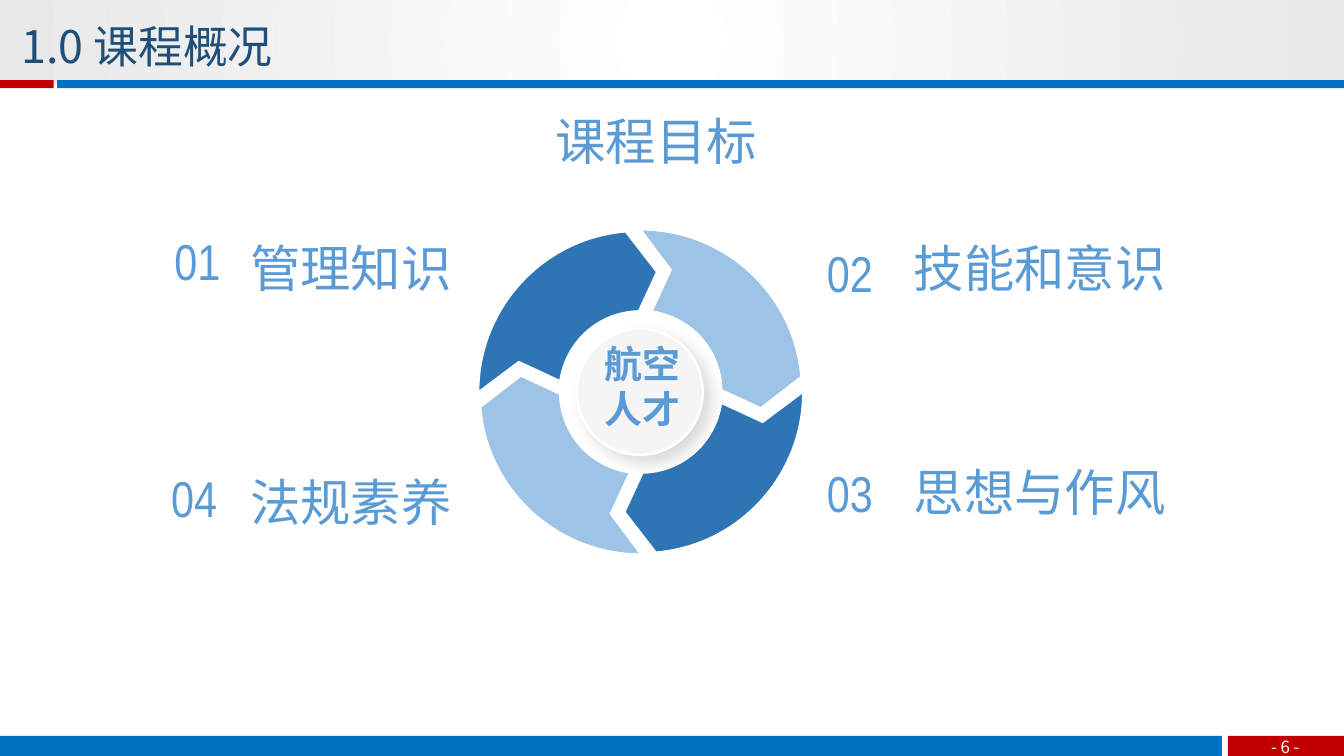
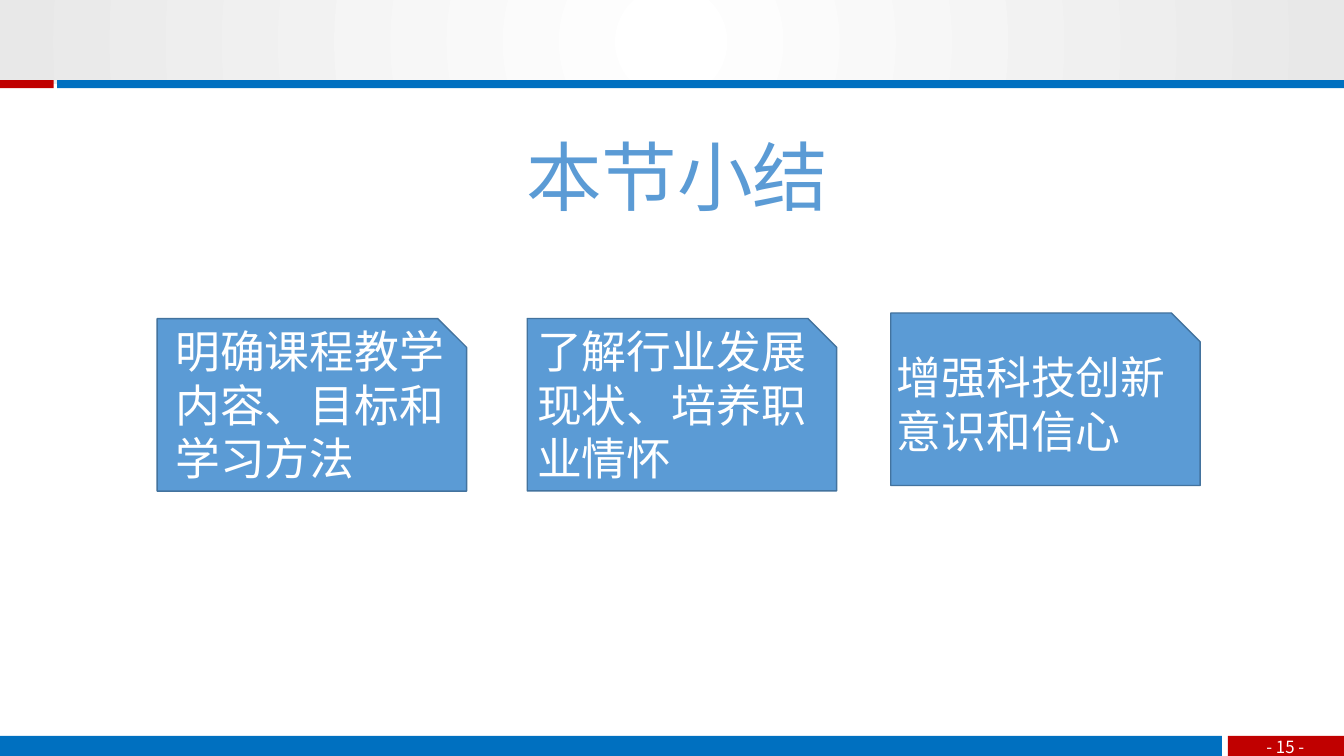
"""Build the course overview and section summary slides."""
from lxml.etree import SubElement
from pptx import Presentation
from pptx.dml.color import RGBColor
from pptx.enum.shapes import MSO_SHAPE
from pptx.enum.text import MSO_ANCHOR, PP_ALIGN
from pptx.oxml.ns import qn
from pptx.util import Pt

CJK, NARROW, LATIN = "Noto Sans CJK SC", "Arial Narrow", "Arial"
WHITE, RED, BLUE, SKY = "FFFFFF", "C00000", "0070C0", "5B9BD5"
DARK, LIGHT, NAVY, EDGE = "2E75B6", "9DC3E6", "1F4E79", "43739E"


def paint(s, fill, line=None, width=1):
    s.shadow.inherit = False
    s.fill.solid()
    s.fill.fore_color.rgb = RGBColor.from_string(fill)
    if line:
        s.line.color.rgb = RGBColor.from_string(line)
        s.line.width = Pt(width)
    else:
        s.line.fill.background()


def add_text(slide, box, text, size, font, color, spacing=None, inset=True):
    tf = slide.shapes.add_textbox(*map(Pt, box)).text_frame
    tf.word_wrap = True
    if not inset:
        tf.margin_left = tf.margin_top = tf.margin_right = tf.margin_bottom = 0
        tf.vertical_anchor = MSO_ANCHOR.MIDDLE
    p = tf.paragraphs[0]
    p.text = text
    p.line_spacing = spacing
    p.font.size = Pt(size)
    p.font.name = font
    p.font.color.rgb = RGBColor.from_string(color)
    return p


prs = Presentation()
prs.slide_width, prs.slide_height = Pt(960), Pt(540)
bands = [
    (40.8, 57.2, 919.2, 5.8, BLUE),
    (0, 57.2, 38.3, 5.8, RED),
    (0, 525.6, 872.8, 14.4, BLUE),
    (877, 525.6, 83, 14.4, RED),
]
slides = []
for number in ("- 6 -", "- 15 -"):
    slide = prs.slides.add_slide(prs.slide_layouts[6])
    slides.append(slide)
    header = slide.shapes.add_shape(MSO_SHAPE.RECTANGLE, Pt(-1.2), 0, Pt(961.2), Pt(59.8))
    header.shadow.inherit = False
    header.line.fill.background()
    header.fill.gradient()
    for stop, color in zip(header.fill.gradient_stops, (WHITE, "E8E8E8")):
        stop.color.rgb = RGBColor.from_string(color)
    grad = header.element.spPr.find(qn("a:gradFill"))
    grad.remove(grad.find(qn("a:lin")))
    circle = SubElement(grad, qn("a:path"), path="circle")
    SubElement(circle, qn("a:fillToRect"), l="50000", t="50000", r="50000", b="50000")
    for x, y, w, h, color in bands:
        s = slide.shapes.add_shape(MSO_SHAPE.RECTANGLE, Pt(x), Pt(y), Pt(w), Pt(h))
        paint(s, color)
    p = add_text(slide, (890, 522.7, 56.2, 21.6), number, 12, CJK, WHITE, inset=False)
    p.alignment = PP_ALIGN.CENTER
overview, summary = slides

cx, cy = 457.7, 280
segment = [
    (57.8, -1.4), (85.7, 11.5), (114.5, -10.8),
    (109.7, -69.8), (60, -115.9), (0, -115.9),
    (21.6, -87.1), (7.9, -57.6),
    (36.2, -53.3), (57.1, -30.2), (57.8, -1.4),
]
for color in (LIGHT, DARK, LIGHT, DARK):
    points = [(Pt(cx + x), Pt(cy + y)) for x, y in segment]
    builder = overview.shapes.build_freeform(*points[0])
    builder.add_line_segments(points[1:])
    s = builder.convert_to_shape()
    paint(s, color, WHITE, 1.25)
    outline = next(s.element.spPr.iter(qn("a:path")))
    lines = outline.findall(qn("a:lnTo"))
    for first in (2, 7):
        curve = SubElement(outline, qn("a:cubicBezTo"))
        lines[first].addprevious(curve)
        for line in lines[first:first + 3]:
            curve.append(line[0])
            outline.remove(line)
    segment = [(y, -x) for x, y in segment]

goals = [
    ("01", 124.6, 164.2, "管理知识", 171.6, 157, 111.6),
    ("02", 590.6, 172.8, "技能和意识", 645.6, 157, 111.6),
    ("03", 590.6, 329.6, "思想与作风", 645.6, 317.5, 59.8),
    ("04", 122.2, 333.2, "法规素养", 171.6, 324.7, 59.8),
]
for number, nx, ny, goal, gx, gy, height in goals:
    add_text(overview, (nx, ny, 38.2, 43.9), number, 36, NARROW, SKY, inset=False)
    add_text(overview, (gx, gy, 218, height), goal, 36, CJK, SKY, 1.2)

hub = overview.shapes.add_shape(MSO_SHAPE.OVAL, Pt(412), Pt(234.9), Pt(90), Pt(90))
paint(hub, "F5F5F5", WHITE, 1.75)
shadow = SubElement(hub.element.spPr.find(qn("a:effectLst")), qn("a:outerShdw"),
                    blurRad=str(Pt(11)), dist=str(Pt(7)), dir="2700000")
black = SubElement(shadow, qn("a:srgbClr"), val="000000")
SubElement(black, qn("a:alpha"), val="14000")
p = add_text(overview, (424.8, 239.8, 69.1, 72.7), "航空人才", 27, LATIN, SKY)
p.font.bold = True

add_text(overview, (389.5, 66.2, 218, 59.8), "课程目标", 36, CJK, SKY, 1.2)
add_text(overview, (8.1, 10.1, 495.4, 46), "1.0 课程概况", 32, CJK, NAVY)

add_text(summary, (368.8, 89.3, 347.8, 72.7), "本节小结", 54, LATIN, SKY)
cards = [
    (112.3, 227.6, "明确课程教学内容、目标和学习方法", 118.1, 227.6, 123.8),
    (376.6, 227.5, "了解行业发展现状、培养职业情怀", 376.6, 227.6, 123.8),
    (636.3, 223.6, "增强科技创新意识和信心", 633.4, 246.2, 85),
]
for x, y, text, tx, ty, height in cards:
    s = summary.shapes.add_shape(MSO_SHAPE.SNIP_1_RECTANGLE, Pt(x), Pt(y), Pt(221), Pt(123.2))
    paint(s, SKY, EDGE)
    add_text(summary, (tx, ty, 226.8, height), text, 32, LATIN, WHITE)

prs.save("out.pptx")
